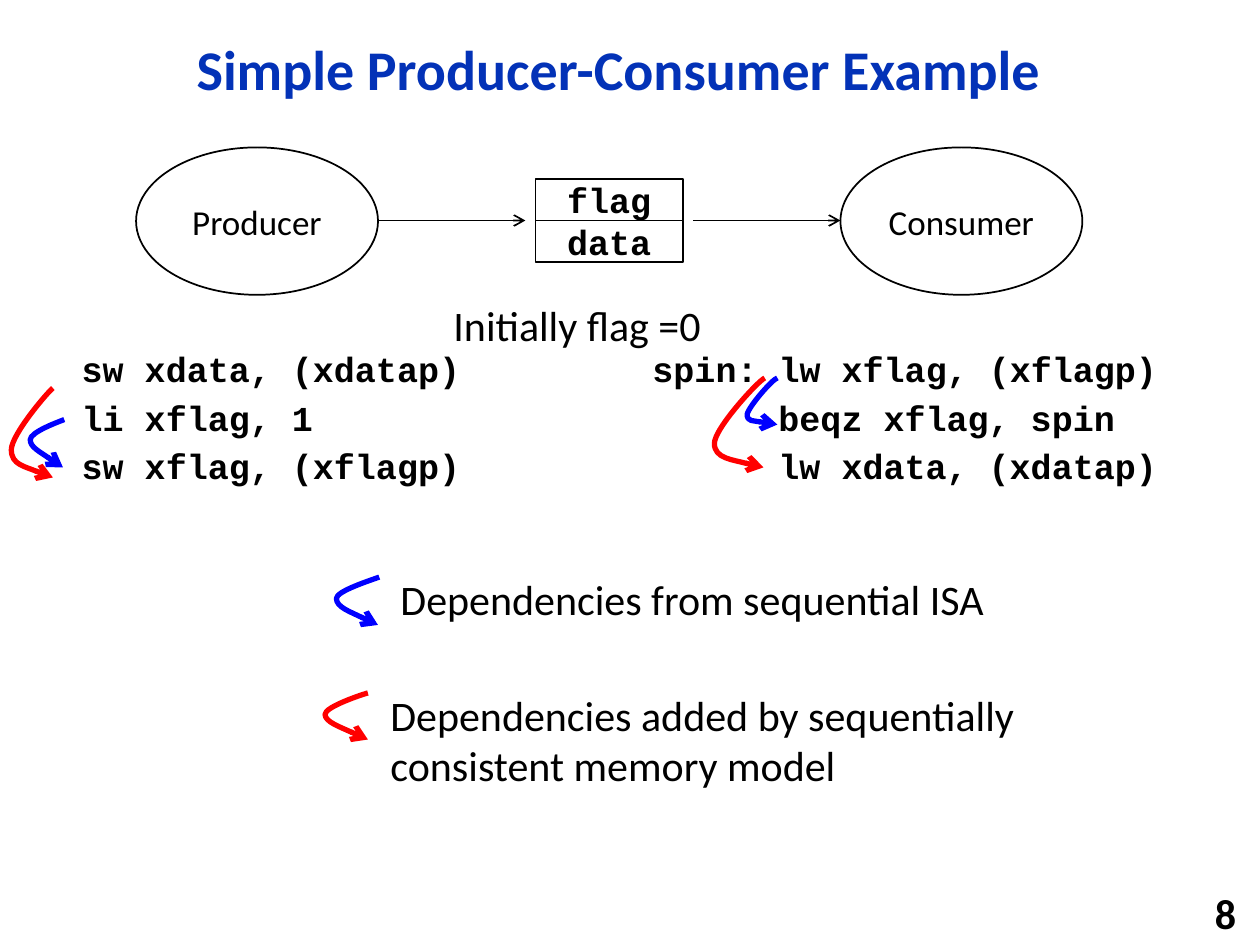
from dataclasses import dataclass
from typing import Optional

from lxml.etree import SubElement
from pptx import Presentation
from pptx.dml.color import RGBColor
from pptx.enum.shapes import MSO_CONNECTOR, MSO_SHAPE
from pptx.enum.text import MSO_ANCHOR as Anchor, PP_ALIGN as Align
from pptx.oxml.ns import qn
from pptx.util import Inches, Pt


@dataclass(frozen=True)
class Theme:
    black: RGBColor = RGBColor(0, 0, 0)
    white: RGBColor = RGBColor(255, 255, 255)
    title: RGBColor = RGBColor(0x03, 0x32, 0xB7)
    isa: RGBColor = RGBColor(0, 0, 255)
    model: RGBColor = RGBColor(255, 0, 0)
    sans: str = "Calibri"
    mono: str = "Courier New"
    title_size: int = 32
    note_size: int = 24
    label_size: int = 20
    thin: int = 1
    thick: int = 3


THEME = Theme()


@dataclass(frozen=True)
class Style:
    size: int = THEME.note_size
    font: str = THEME.sans
    color: RGBColor = THEME.black
    bold: bool = False
    align: Align = Align.LEFT
    anchor: Anchor = Anchor.TOP
    spacing: Optional[float] = None
    before: int = 0
    wrap: bool = True
    tab: Optional[float] = None


NOTE = Style(wrap=False)
LEGEND = Style()
TITLE = Style(THEME.title_size, color=THEME.title, bold=True,
              align=Align.CENTER, anchor=Anchor.MIDDLE, spacing=0.9)
CODE = Style(THEME.label_size, THEME.mono, bold=True, spacing=0.9, before=6, tab=1)
NUMBER = Style(bold=True, align=Align.RIGHT, anchor=Anchor.MIDDLE, wrap=False)
ACTOR = Style(THEME.label_size, align=Align.CENTER, anchor=Anchor.MIDDLE)
CELL = Style(THEME.label_size, THEME.mono, bold=True,
             align=Align.CENTER, anchor=Anchor.MIDDLE)


@dataclass(frozen=True)
class Label:
    text: str
    left: float
    top: float
    width: float
    height: float
    style: Style


@dataclass(frozen=True)
class Node(Label):
    kind: MSO_SHAPE


@dataclass(frozen=True)
class Dependency:
    """A curved arrow: start point, then two cubic segments of three points."""
    color: RGBColor
    start: tuple
    curve: tuple


TEXTS = [
    Label("Simple Producer-Consumer Example", 0.92, 0.17, 7.98, 0.81, TITLE),
    Label("sw xdata, (xdatap)\nli xflag, 1\nsw xflag, (xflagp)",
          0.55, 2.75, 4.12, 3.94, CODE),
    Label("spin: lw xflag, (xflagp)\n\tbeqz xflag, spin\n\tlw xdata, (xdatap)",
          5.08, 2.75, 4.58, 3.94, CODE),
    Label("8", 7.83, 7.08, 2.08, 0.32, NUMBER),
    Label("Initially flag =0", 3.5, 2.33, 2.18, 0.5, NOTE),
    Label("Dependencies from sequential ISA", 3.08, 4.5, 4.89, 0.5, NOTE),
    Label("Dependencies added by sequentially consistent memory model",
          3, 5.42, 5.42, 0.91, LEGEND),
]

NODES = [
    Node("data", 4.25, 1.75, 1.17, 0.33, CELL, MSO_SHAPE.RECTANGLE),
    Node("flag", 4.25, 1.42, 1.17, 0.33, CELL, MSO_SHAPE.RECTANGLE),
    Node("Producer", 1.08, 1.17, 1.92, 1.17, ACTOR, MSO_SHAPE.OVAL),
    Node("Consumer", 6.67, 1.17, 1.92, 1.17, ACTOR, MSO_SHAPE.OVAL),
]

FLOW_Y = 1.75
FLOWS = [(3, 4.17), (5.5, 6.67)]

DEPENDENCIES = [
    Dependency(THEME.isa, (0.51, 3.33), ((0.46, 3.35), (0.24, 3.43), (0.24, 3.49),
                                         (0.24, 3.55), (0.5, 3.71), (0.5, 3.71))),
    Dependency(THEME.isa, (6.17, 3), ((6.13, 3.01), (5.94, 3.23), (5.93, 3.29),
                                      (5.93, 3.35), (6.17, 3.37), (6.17, 3.37))),
    Dependency(THEME.isa, (3.01, 4.58), ((2.96, 4.6), (2.67, 4.69), (2.67, 4.75),
                                         (2.67, 4.82), (3, 4.96), (3, 4.96))),
    Dependency(THEME.model, (2.92, 5.5), ((2.88, 5.51), (2.58, 5.61), (2.58, 5.67),
                                          (2.58, 5.73), (2.92, 5.87), (2.92, 5.87))),
    Dependency(THEME.model, (0.42, 3.08), ((0.38, 3.11), (0.09, 3.45), (0.09, 3.57),
                                           (0.09, 3.69), (0.42, 3.79), (0.42, 3.79))),
    Dependency(THEME.model, (6.07, 3), ((6.02, 3.02), (5.67, 3.4), (5.67, 3.52),
                                        (5.67, 3.64), (6.06, 3.71), (6.06, 3.71))),
]


def place(item: Label) -> tuple:
    return tuple(Inches(v) for v in (item.left, item.top, item.width, item.height))


def write(frame, text: str, style: Style) -> None:
    frame.text = text
    frame.word_wrap = style.wrap
    frame.vertical_anchor = style.anchor
    for para in frame.paragraphs:
        para.alignment = style.align
        para.space_before = Pt(style.before)
        if style.spacing:
            para.line_spacing = style.spacing
        if style.tab:
            stops = SubElement(para._p.get_or_add_pPr(), qn("a:tabLst"))
            SubElement(stops, qn("a:tab"), pos=str(Inches(style.tab)), algn="l")
        for span in para.runs:
            span.font.name = style.font
            span.font.size = Pt(style.size)
            span.font.bold = style.bold
            span.font.color.rgb = style.color


def draw_line(line, color: RGBColor, width: int, arrow: bool = False) -> None:
    line.color.rgb = color
    line.width = Pt(width)
    if arrow:
        SubElement(line._get_or_add_ln(), qn("a:tailEnd"), type="arrow")


def add_label(page, label: Label) -> None:
    box = page.shapes.add_textbox(*place(label))
    write(box.text_frame, label.text, label.style)


def add_node(page, node: Node) -> None:
    shape = page.shapes.add_shape(node.kind, *place(node))
    shape.shadow.inherit = False
    shape.fill.solid()
    shape.fill.fore_color.rgb = THEME.white
    draw_line(shape.line, THEME.black, THEME.thin)
    frame = shape.text_frame
    frame.margin_left = frame.margin_right = 0
    frame.margin_top = frame.margin_bottom = 0
    write(frame, node.text, node.style)


def add_flow(page, start: float, end: float) -> None:
    arrow = page.shapes.add_connector(MSO_CONNECTOR.STRAIGHT, Inches(start),
                                      Inches(FLOW_Y), Inches(end), Inches(FLOW_Y))
    draw_line(arrow.line, THEME.black, THEME.thin, arrow=True)
    SubElement(arrow._element.spPr, qn("a:effectLst"))


def add_dependency(page, item: Dependency) -> None:
    """Build through the control points, then join each three into a cubic."""
    builder = page.shapes.build_freeform(*map(Inches, item.start))
    builder.add_line_segments([(Inches(x), Inches(y)) for x, y in item.curve],
                              close=False)
    shape = builder.convert_to_shape()
    outline = shape._element.spPr.find(".//" + qn("a:path"))
    segments = outline.findall(qn("a:lnTo"))
    for first in range(0, len(segments), 3):
        cubic = SubElement(outline, qn("a:cubicBezTo"))
        for segment in segments[first:first + 3]:
            cubic.append(segment[0])
            outline.remove(segment)
    shape.shadow.inherit = False
    shape.fill.background()
    draw_line(shape.line, item.color, THEME.thick, arrow=True)


def main() -> None:
    deck = Presentation()
    deck.slide_width, deck.slide_height = Inches(10), Inches(7.5)
    page = deck.slides.add_slide(deck.slide_layouts[6])
    for label in TEXTS:
        add_label(page, label)
    for node in NODES:
        add_node(page, node)
    for start, end in FLOWS:
        add_flow(page, start, end)
    for item in DEPENDENCIES:
        add_dependency(page, item)
    deck.save("out.pptx")


if __name__ == "__main__":
    main()
